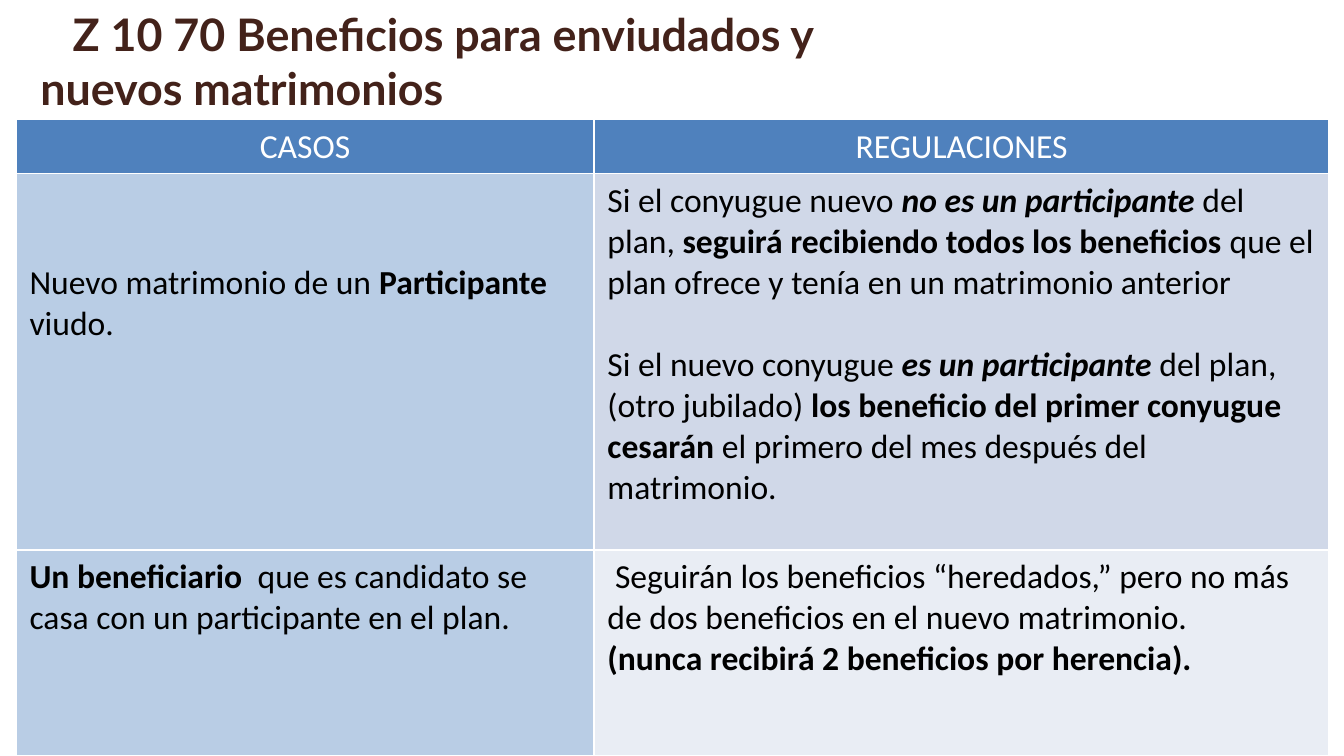
from lxml.etree import SubElement
from pptx import Presentation
from pptx.dml.color import RGBColor
from pptx.enum.text import MSO_ANCHOR, MSO_AUTO_SIZE, PP_ALIGN
from pptx.oxml.ns import qn
from pptx.util import Inches, Pt

COLORS = {
    "title": "43221A", "header": "4F81BD", "case": "B9CDE5",
    "rule_dark": "D0D8E8", "rule_light": "E9EDF4",
    "white": "FFFFFF", "black": "000000",
}
SLIDE_WIDTH = 10
TITLE = "Z 10 70 Beneficios para enviudados y nuevos matrimonios"
COL_WIDTHS = [4.3, 5.47]
ROW_HEIGHTS = [0.4, 2.8, 1.53, 0.39]
LINE = 22  # points taken by one line of 18 pt text

# Each run is (text, style), where style holds "b" for bold and "i" for italic.
# Each cell is (fill, top margin in inches, paragraphs).
ROWS = [
    [("header", 0.05, [[("CASOS", "")]]),
     ("header", 0.05, [[("REGULACIONES", "")]])],
    [("case", 0.66, [[("Nuevo matrimonio de un ", ""), ("Participante ", "b"),
                      (" viudo.", "")]]),
     ("rule_dark", 0.05, [
         [("Si el conyugue nuevo ", ""), ("no es un participante", "bi"),
          (" del plan, ", ""),
          ("seguirá recibiendo todos los beneficios ", "b"),
          ("que el plan ofrece y tenía en un matrimonio anterior", "")],
         [("Si el nuevo conyugue ", ""), ("es un participante", "bi"),
          (" del plan, (otro jubilado) ", ""),
          ("los beneficio del primer conyugue cesarán", "b"),
          (" el primero del mes después del matrimonio.", "")]])],
    [("case", 0.05, [[("Un beneficiario  ", "b"),
                      ("que es candidato se casa con un participante en el plan.", "")]]),
     ("rule_light", 0.05, [
         [(" Seguirán los beneficios “heredados,” pero no más de dos "
           "beneficios en el nuevo matrimonio.", "")],
         [("(nunca recibirá 2 beneficios por herencia).", "b")]])],
    [("case", 0.05, []), ("rule_dark", 0.05, [])],
]


def rgb(name):
    return RGBColor.from_string(COLORS[name])


def add_run(p, text, font, size, color, style=""):
    r = p.add_run()
    r.text = text
    r.font.name, r.font.size = font, Pt(size)
    r.font.color.rgb = rgb(color)
    r.font.bold, r.font.italic = "b" in style, "i" in style


def set_borders(cell):
    """Draw thin white lines on all sides; they must precede the cell fill."""
    props = cell._tc.get_or_add_tcPr()
    for side in ("lnL", "lnR", "lnT", "lnB"):
        line = SubElement(props, qn(f"a:{side}"), w=str(Pt(1)))
        fill = SubElement(line, qn("a:solidFill"))
        SubElement(fill, qn("a:srgbClr"), val=COLORS["white"])


def fill_cell(cell, content, is_header):
    fill, top, paragraphs = content
    set_borders(cell)
    cell.fill.solid()
    cell.fill.fore_color.rgb = rgb(fill)
    cell.margin_top = Inches(top)
    tf = cell.text_frame
    for i, runs in enumerate(paragraphs):
        p = tf.add_paragraph() if i else tf.paragraphs[0]
        p.alignment = PP_ALIGN.CENTER if is_header else PP_ALIGN.LEFT
        if i and fill == "rule_dark":
            p.space_before = Pt(LINE)
        for text, style in runs:
            add_run(p, text, "Calibri", 18, "white" if is_header else "black", style)


def add_title(s):
    title = s.shapes.title
    title.left, title.top = Inches(0.2), Inches(0)
    title.width, title.height = Inches(6.3), Inches(0.91)
    tf = title.text_frame
    tf.word_wrap = True
    tf.auto_size = MSO_AUTO_SIZE.SHAPE_TO_FIT_TEXT
    tf.vertical_anchor = MSO_ANCHOR.TOP
    p = tf.paragraphs[0]
    p.alignment = PP_ALIGN.LEFT
    props = p._p.get_or_add_pPr()
    props.set("marL", "0")
    props.set("indent", str(Inches(0.24)))
    p.space_before = Pt(0)
    add_run(p, TITLE, "Lato", 24, "title", "b")


def add_benefits_table(s):
    table = s.shapes.add_table(
        len(ROWS), len(COL_WIDTHS), Inches(0.12), Inches(0.89),
        Inches(sum(COL_WIDTHS)), Inches(sum(ROW_HEIGHTS))).table
    for column, width in zip(table.columns, COL_WIDTHS):
        column.width = Inches(width)
    for row, height in zip(table.rows, ROW_HEIGHTS):
        row.height = Inches(height)
    for i, row in enumerate(ROWS):
        for j, content in enumerate(row):
            fill_cell(table.cell(i, j), content, i == 0)


def main():
    prs = Presentation()
    prs.slide_width = Inches(SLIDE_WIDTH)
    prs.slide_height = Inches(SLIDE_WIDTH * 9 / 16)
    s = prs.slides.add_slide(prs.slide_layouts[5])
    add_title(s)
    add_benefits_table(s)
    prs.save("out.pptx")


if __name__ == "__main__":
    main()
